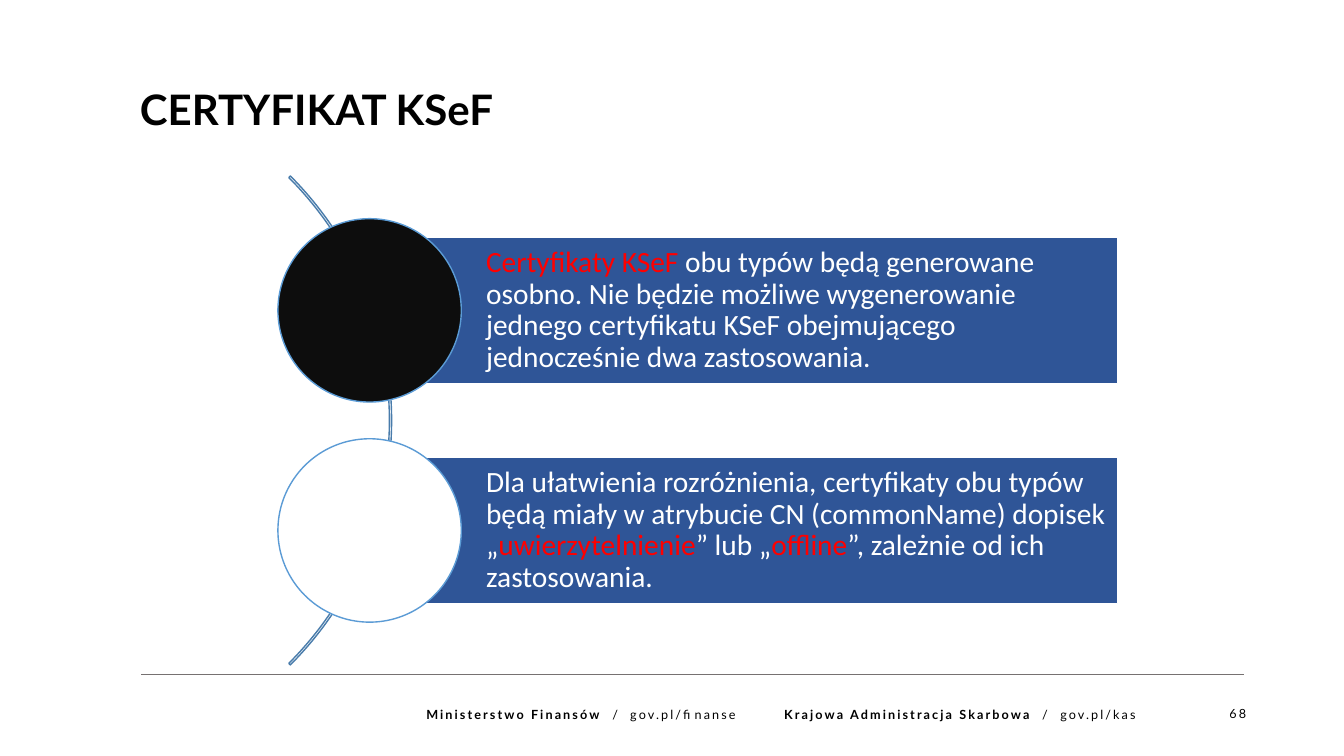
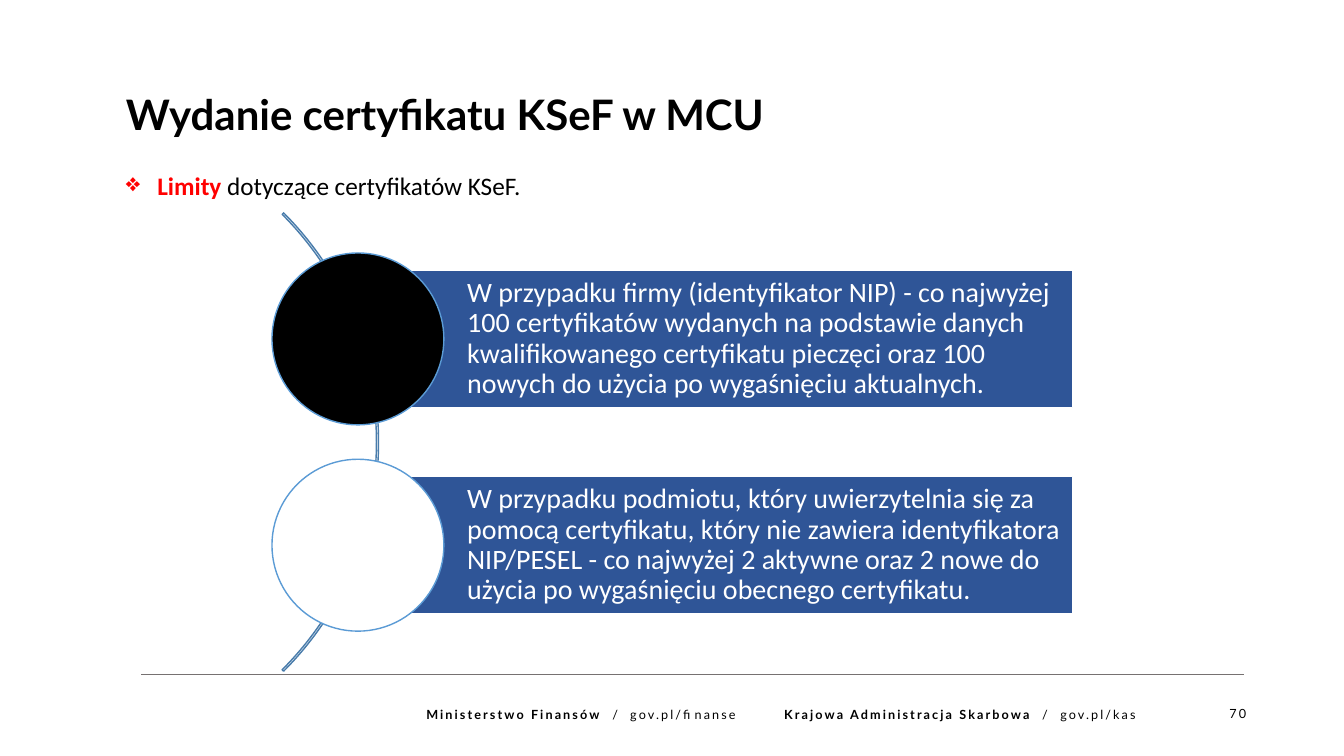
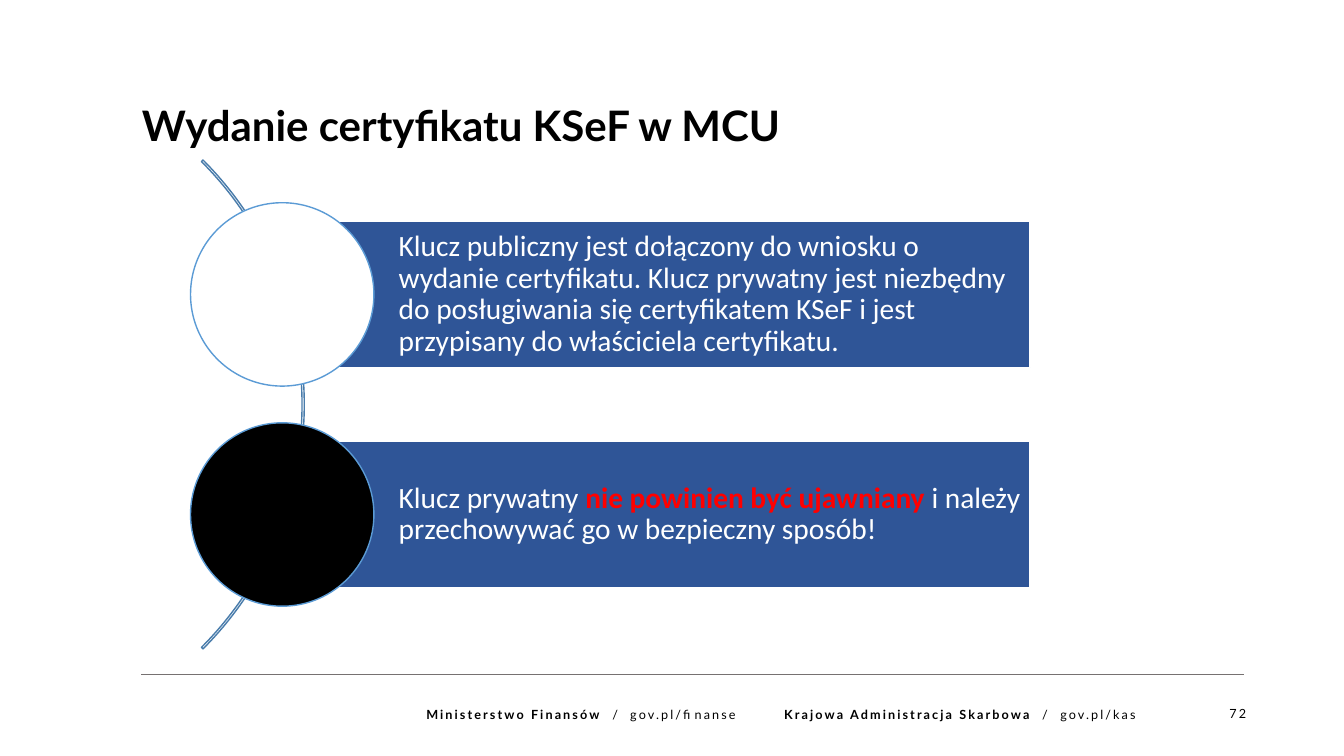
from dataclasses import dataclass

from lxml import etree
from pptx import Presentation
from pptx.dml.color import RGBColor
from pptx.enum.shapes import MSO_CONNECTOR, MSO_SHAPE
from pptx.enum.text import MSO_ANCHOR, MSO_AUTO_SIZE, PP_ALIGN
from pptx.oxml.ns import qn
from pptx.util import Pt

ARC, RECTANGLE, OVAL = MSO_SHAPE.BLOCK_ARC, MSO_SHAPE.RECTANGLE, MSO_SHAPE.OVAL
LEFT, RIGHT, JUSTIFY = PP_ALIGN.LEFT, PP_ALIGN.RIGHT, PP_ALIGN.JUSTIFY
MIDDLE = MSO_ANCHOR.MIDDLE
GROW = MSO_AUTO_SIZE.SHAPE_TO_FIT_TEXT
STRAIGHT = MSO_CONNECTOR.STRAIGHT


@dataclass(frozen=True)
class Theme:
    black: str = "000000"
    near_black: str = "0D0D0D"
    white: str = "FFFFFF"
    red: str = "FF0000"
    bar: str = "2F5597"
    arc: str = "497CAB"
    ring: str = "5B9BD5"
    rule: str = "767171"
    heading_font: str = "Lato"
    body_font: str = "Calibri"
    title_size: float = 30
    intro_size: float = 18
    footer_size: float = 9
    footer_tracking: float = 1.5


THEME = Theme()


@dataclass(frozen=True)
class Span:
    text: str
    color: str = THEME.white
    bold: bool = False


@dataclass(frozen=True)
class Item:
    dot: str
    spans: tuple[Span, ...]


@dataclass(frozen=True)
class Diagram:
    """Two dots on an arc, each with a bar; left and top are those of the first dot."""
    left: float
    top: float
    dot: float
    bar_width: float
    text_size: float
    items: tuple[Item, ...]


@dataclass(frozen=True)
class Page:
    number: str
    title: str
    title_left: float
    title_top: float
    diagram: Diagram
    intro: tuple[Span, ...] = ()


FOOTER_TABS = (132.9, 145.7, 255.7, 440, 452.9)
FOOTER = (
    Span("Ministerstwo Finansów", THEME.black, True),
    Span("\t/\tgov.pl/finanse", THEME.black),
    Span("\tKrajowa Administracja Skarbowa", THEME.black, True),
    Span("\t/\tgov.pl/kas", THEME.black),
)

PAGES = (
    Page("68", "CERTYFIKAT KSeF", 92.9, 56.2, Diagram(198.5, 156.2, 131, 534.2, 21, (
        Item(THEME.near_black, (
            Span("Certyfikaty KSeF ", THEME.red),
            Span("obu typów będą generowane osobno. Nie będzie możliwe wygenerowanie "
                 "jednego certyfikatu KSeF obejmującego jednocześnie dwa zastosowania."),
        )),
        Item(THEME.white, (
            Span("Dla ułatwienia rozróżnienia, certyfikaty obu typów będą miały w "
                 "atrybucie CN (commonName) dopisek „"),
            Span("uwierzytelnienie", THEME.red),
            Span("” lub „"),
            Span("offline", THEME.red),
            Span("”, zależnie od ich zastosowania."),
        )),
    ))),
    Page("70", "Wydanie certyfikatu KSeF w MCU", 82.8, 59.8, Diagram(194.3, 180.7, 122.8, 510.5, 20, (
        Item(THEME.black, (
            Span("W przypadku firmy (identyfikator NIP) - co najwyżej 100 certyfikatów "
                 "wydanych na podstawie danych kwalifikowanego certyfikatu pieczęci oraz "
                 "100 nowych do użycia po wygaśnięciu aktualnych."),
        )),
        Item(THEME.white, (
            Span("W przypadku podmiotu, który uwierzytelnia się za pomocą certyfikatu, "
                 "który nie zawiera identyfikatora NIP/PESEL - co najwyżej 2 aktywne oraz "
                 "2 nowe do użycia po wygaśnięciu obecnego certyfikatu."),
        )),
    )), (Span("Limity", THEME.red, True), Span(" dotyczące certyfikatów KSeF.", THEME.black))),
    Page("72", "Wydanie certyfikatu KSeF w MCU", 94.3, 67.7, Diagram(136.1, 144.8, 131, 534.2, 21, (
        Item(THEME.white, (
            Span("Klucz publiczny jest dołączony do wniosku o wydanie certyfikatu. Klucz "
                 "prywatny jest niezbędny do posługiwania się certyfikatem KSeF i jest "
                 "przypisany do właściciela certyfikatu."),
        )),
        Item(THEME.black, (
            Span("Klucz prywatny "),
            Span("nie powinien być ujawniany", THEME.red, True),
            Span(" i należy przechowywać go w bezpieczny sposób!"),
        )),
    ))),
)


def rgb(color: str) -> RGBColor:
    return RGBColor.from_string(color)


def apply(target, values: dict) -> None:
    for name, value in values.items():
        setattr(target, name, value)


def write(paragraph, spans: tuple[Span, ...], font: str, size: float,
          line_spacing: float = 1.0, align=LEFT, tracking: float = 0) -> None:
    apply(paragraph, {"line_spacing": line_spacing, "alignment": align})
    for span in spans:
        run = paragraph.add_run()
        run.text = span.text
        apply(run.font, {"name": font, "size": Pt(size), "bold": span.bold})
        run.font.color.rgb = rgb(span.color)
        if tracking:
            run._r.get_or_add_rPr().set("spc", str(round(tracking * 100)))


def add_text(slide, left: float, top: float, width: float, height: float):
    """Add a wrapping text box and return its frame."""
    frame = slide.shapes.add_textbox(Pt(left), Pt(top), Pt(width), Pt(height)).text_frame
    frame.word_wrap = True
    return frame


def add_figure(slide, preset, left: float, top: float, width: float, height: float,
               line: str, fill: str = ""):
    figure = slide.shapes.add_shape(preset, Pt(left), Pt(top), Pt(width), Pt(height))
    figure.shadow.inherit = False
    if fill:
        figure.fill.solid()
        figure.fill.fore_color.rgb = rgb(fill)
    else:
        figure.fill.background()
    figure.line.color.rgb = rgb(line)
    figure.line.width = Pt(1)
    return figure


def add_tab_stops(paragraph, stops: tuple[float, ...]) -> None:
    tab_list = etree.SubElement(paragraph._p.get_or_add_pPr(), qn("a:tabLst"))
    for stop in stops:
        etree.SubElement(tab_list, qn("a:tab"), pos=str(Pt(stop)), algn="l")


def add_bullet(paragraph, symbol: str, color: str, indent: float) -> None:
    properties = paragraph._p.get_or_add_pPr()
    properties.set("marL", str(Pt(indent)))
    properties.set("indent", str(-Pt(indent)))
    bullet_color = etree.SubElement(properties, qn("a:buClr"))
    etree.SubElement(bullet_color, qn("a:srgbClr"), val=color)
    etree.SubElement(properties, qn("a:buChar"), char=symbol)


def add_footer(slide, number: str) -> None:
    style = {"font": THEME.heading_font, "size": THEME.footer_size,
             "line_spacing": 0.9, "tracking": THEME.footer_tracking}
    offices = add_text(slide, 297.4, 502.6, 560, 15.8).paragraphs[0]
    add_tab_stops(offices, FOOTER_TABS)
    write(offices, FOOTER, **style)
    page_number = add_text(slide, 860.4, 501.8, 36.7, 15.8).paragraphs[0]
    write(page_number, (Span(number, THEME.black),), align=RIGHT, **style)

    rule = slide.shapes.add_connector(STRAIGHT, Pt(101), Pt(482), Pt(888.5), Pt(482))
    rule.line.color.rgb = rgb(THEME.rule)
    rule.line.width = Pt(0.5)
    etree.SubElement(rule._element.spPr, qn("a:effectLst"))


def add_diagram(slide, diagram: Diagram) -> None:
    """Draw arc, bars and dots; every proportion follows from the dot's diameter."""
    dot = diagram.dot
    pitch = 1.2 * dot
    bar_left = diagram.left + dot / 2
    arc_size = 3.77 * dot
    arc_middle = diagram.top + (pitch * (len(diagram.items) - 1) + dot) / 2

    arc = add_figure(slide, ARC, bar_left - 3.65 * dot, arc_middle - arc_size / 2,
                     arc_size, arc_size, THEME.arc)
    for index, value in enumerate((189, 27, 0.0032)):
        arc.adjustments[index] = value

    for index, item in enumerate(diagram.items):
        top = diagram.top + index * pitch
        bar = add_figure(slide, RECTANGLE, bar_left, top + 0.1 * dot,
                         diagram.bar_width, 0.8 * dot, THEME.white, THEME.bar)
        apply(bar.text_frame, {
            "word_wrap": True, "vertical_anchor": MIDDLE, "margin_left": Pt(0.635 * dot),
            "margin_top": Pt(4.3), "margin_right": Pt(4.3), "margin_bottom": Pt(4.3),
        })
        write(bar.text_frame.paragraphs[0], item.spans, THEME.body_font,
              diagram.text_size, line_spacing=0.9)
        add_figure(slide, OVAL, diagram.left, top, dot, dot, THEME.ring, item.dot)


def add_page(deck, page: Page) -> None:
    slide = deck.slides.add_slide(deck.slide_layouts[6])
    add_footer(slide, page.number)
    title = add_text(slide, page.title_left, page.title_top, 704, 43.9)
    title.auto_size = GROW
    write(title.paragraphs[0], (Span(page.title, THEME.black, True),),
          THEME.heading_font, THEME.title_size)
    add_diagram(slide, page.diagram)
    if page.intro:
        intro = add_text(slide, page.title_left, 107.3, 737.3, 36.7)
        intro.auto_size = GROW
        add_bullet(intro.paragraphs[0], "❖", THEME.red, 22.5)
        write(intro.paragraphs[0], page.intro, THEME.body_font, THEME.intro_size,
              line_spacing=1.5, align=JUSTIFY)


def main() -> None:
    deck = Presentation()
    apply(deck, {"slide_width": Pt(960), "slide_height": Pt(540)})
    for page in PAGES:
        add_page(deck, page)
    deck.save("out.pptx")


if __name__ == "__main__":
    main()
